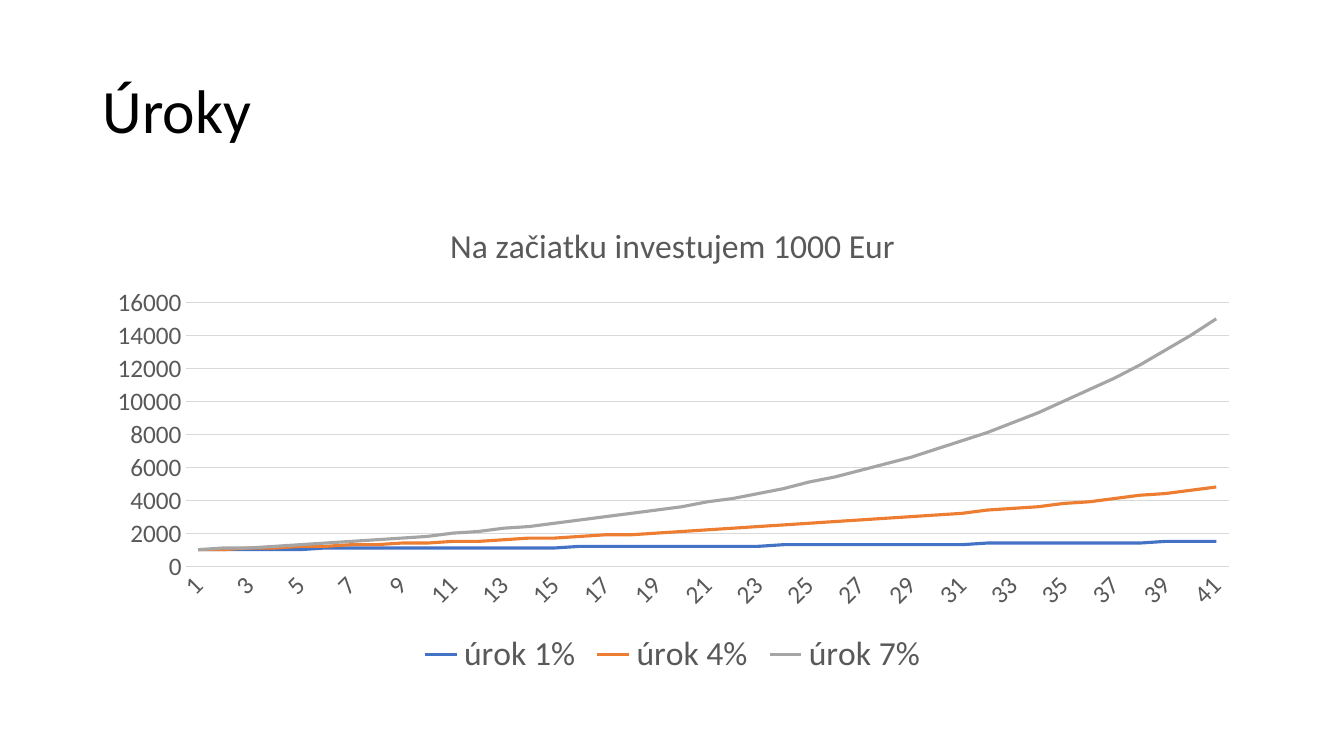
from lxml import etree
from pptx import Presentation
from pptx.chart.data import CategoryChartData
from pptx.dml.color import RGBColor
from pptx.enum.chart import XL_CHART_TYPE as ChartType, XL_LEGEND_POSITION as LegendPosition
from pptx.enum.chart import XL_TICK_MARK as TickMark
from pptx.enum.text import MSO_ANCHOR as Anchor
from pptx.oxml.ns import qn
from pptx.util import Inches, Pt

BLACK = RGBColor(0x00, 0x00, 0x00)
GRAY = RGBColor(0x59, 0x59, 0x59)
GRID = RGBColor(0xD9, 0xD9, 0xD9)
RATE_COLORS = {
    1: RGBColor(0x44, 0x72, 0xC4),
    4: RGBColor(0xED, 0x7D, 0x31),
    7: RGBColor(0xA5, 0xA5, 0xA5),
}
FONT = "Calibri"
DEPOSIT = 1000
YEARS = range(41)
PLOT_AREA = {"x": 0.08, "y": 0.21, "w": 0.9, "h": 0.55}


def set_font(font, size, color):
    for name, value in {"name": FONT, "size": Pt(size), "bold": False}.items():
        setattr(font, name, value)
    font.color.rgb = color


def set_line(line, color, width):
    line.color.rgb = color
    line.width = Pt(width)


def add_title(page, text):
    box = page.shapes.add_textbox(Inches(0.92), Inches(0.4), Inches(11.5), Inches(1.45))
    frame = box.text_frame
    for name, value in {"word_wrap": True, "vertical_anchor": Anchor.MIDDLE}.items():
        setattr(frame, name, value)
    para = frame.paragraphs[0]
    para.line_spacing = 0.9
    span = para.add_run()
    span.text = text
    set_font(span.font, 44, BLACK)


def interest_data():
    data = CategoryChartData(number_format="General")
    data.categories = [str(year + 1) for year in YEARS]
    for rate in RATE_COLORS:
        balances = [round(DEPOSIT * (1 + rate / 100) ** year, -2) for year in YEARS]
        data.add_series(f"úrok {rate}%", balances)
    return data


def place_plot(chart):
    plot_area = chart.plots[0]._element.getparent()
    layout = plot_area.find(qn("c:layout"))
    if layout is None:
        layout = etree.Element(qn("c:layout"))
        plot_area.insert(0, layout)
    manual = etree.SubElement(layout, qn("c:manualLayout"))
    settings = {"layoutTarget": "inner", "xMode": "edge", "yMode": "edge", **PLOT_AREA}
    for name, value in settings.items():
        etree.SubElement(manual, qn(f"c:{name}")).set("val", str(value))


def format_axes(chart):
    years, balances = chart.category_axis, chart.value_axis
    for axis in (years, balances):
        axis.major_tick_mark = TickMark.NONE
        axis.minor_tick_mark = TickMark.NONE
        set_font(axis.tick_labels.font, 18, GRAY)
    set_line(years.format.line, GRID, 0.75)
    years._element.find(qn("c:txPr")).find(qn("a:bodyPr")).set("rot", "-2700000")
    skip = etree.Element(qn("c:tickLblSkip"))
    skip.set("val", "2")
    years._element.find(qn("c:noMultiLvlLbl")).addprevious(skip)
    balances.format.line.fill.background()
    for name, value in {"minimum_scale": 0, "maximum_scale": 16000, "major_unit": 2000}.items():
        setattr(balances, name, value)
    set_line(balances.major_gridlines.format.line, GRID, 0.75)


def add_interest_chart(page, title):
    chart = page.shapes.add_chart(
        ChartType.LINE, Inches(0.92), Inches(2), Inches(11.5), Inches(4.76), interest_data()
    ).chart
    set_font(chart.font, 10, BLACK)
    span = chart.chart_title.text_frame.paragraphs[0].add_run()
    span.text = title
    set_font(span.font, 24, GRAY)
    chart.chart_title.include_in_layout = False
    chart.has_legend = True
    chart.legend.position = LegendPosition.BOTTOM
    chart.legend.include_in_layout = False
    set_font(chart.legend.font, 24, GRAY)
    plot = chart.plots[0]
    plot.vary_by_categories = False
    for series, color in zip(plot.series, RATE_COLORS.values()):
        series.smooth = False
        set_line(series.format.line, color, 2.25)
    format_axes(chart)
    place_plot(chart)


def main():
    deck = Presentation()
    deck.slide_width, deck.slide_height = Inches(13.33), Inches(7.5)
    page = deck.slides.add_slide(deck.slide_layouts[6])
    add_title(page, "Úroky")
    add_interest_chart(page, "Na začiatku investujem 1000 Eur")
    deck.save("out.pptx")


if __name__ == "__main__":
    main()
